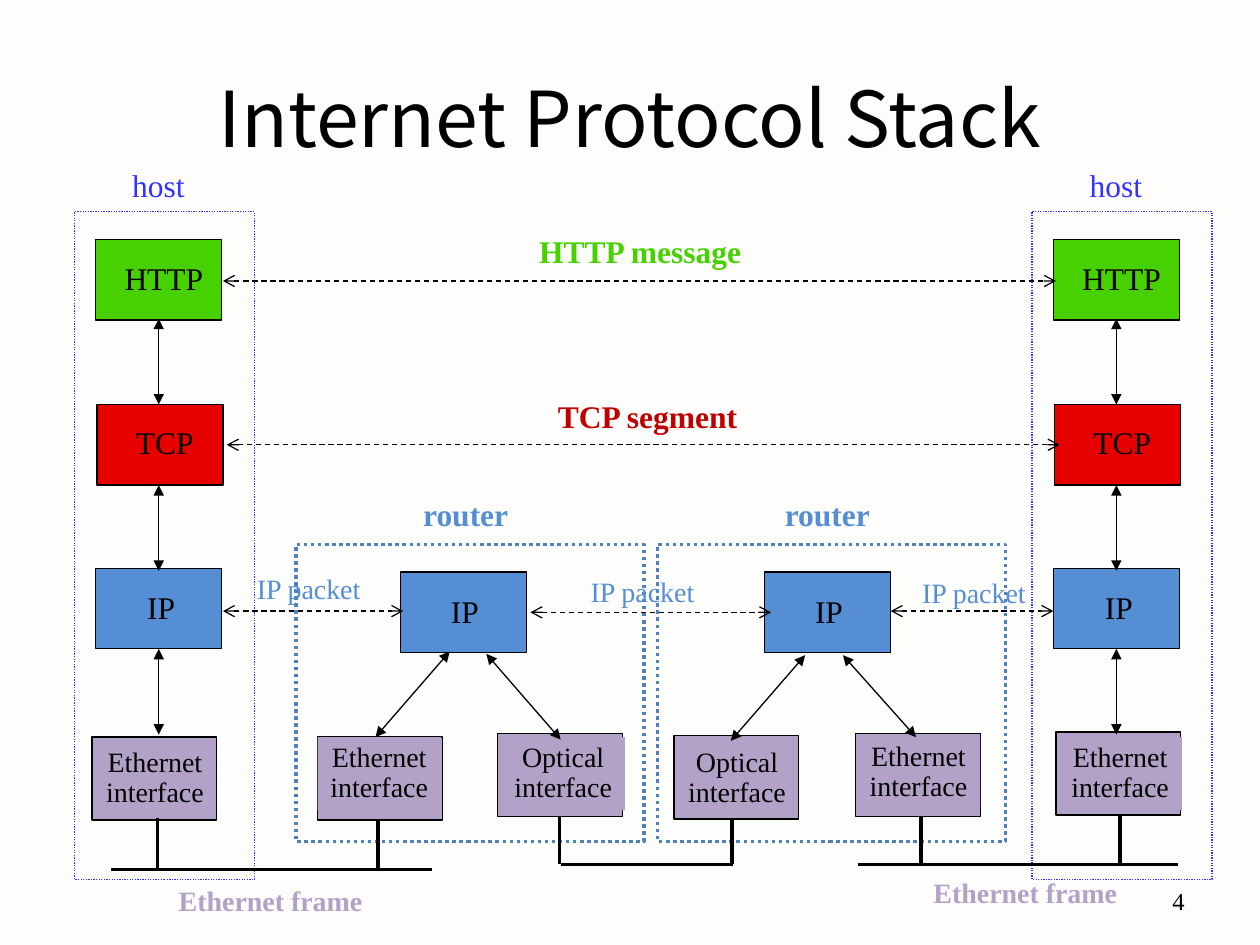
from lxml import etree
from pptx import Presentation
from pptx.dml.color import RGBColor
from pptx.enum.dml import MSO_LINE_DASH_STYLE as DASH
from pptx.enum.shapes import MSO_CONNECTOR as CONNECTOR, MSO_SHAPE as SHAPE
from pptx.enum.text import MSO_ANCHOR as ANCHOR, MSO_AUTO_SIZE as AUTO_SIZE, PP_ALIGN as ALIGN
from pptx.oxml.ns import qn
from pptx.util import Inches, Pt

# The slide is a grid of 100 columns by 75 rows; all lengths are in grid units.
COLUMNS, ROWS = 100, 75
UNIT = Inches(10) / COLUMNS

SERIF, SANS = "Times New Roman", "Noto Sans CJK JP"
BLACK, GREEN, RED, DARK_RED = "000000", "48D100", "E70000", "C00000"
BLUE, PURPLE, HOST_BLUE, ROUTER_BLUE = "558ED5", "B3A2C7", "3333FF", "4F81BD"

LAYER_SIZE = (10, 6.4)
INTERFACE_SIZE = (9.9, 6.6)
CAPTION_SIZE = (9.8, 5.8)
HOST_SIZE = (14.3, 53)
ROUTER_SIZE = (27.6, 23.6)


def grid(*lengths):
    return [round(length * UNIT) for length in lengths]


def color(value):
    return RGBColor.from_string(value)


def shift(origin, offset):
    return origin[0] + offset[0], origin[1] + offset[1]


def add_box(page, at, size, fill=None, line=None, width=0.75, dash=None):
    box = page.shapes.add_shape(SHAPE.RECTANGLE, *grid(*at, *size))
    box.shadow.inherit = False
    if fill:
        box.fill.solid()
        box.fill.fore_color.rgb = color(fill)
    else:
        box.fill.background()
    if line:
        box.line.color.rgb = color(line)
        box.line.width = Pt(width)
        if dash:
            box.line.dash_style = dash
    else:
        box.line.fill.background()
    return box


def add_text(page, at, size, lines, points=18, ink=BLACK, bold=False, align=ALIGN.LEFT,
             font=SERIF, anchor=ANCHOR.TOP, spacing=None, fill=None, wrap=False):
    box = page.shapes.add_textbox(*grid(*at, *size))
    if fill:
        box.fill.solid()
        box.fill.fore_color.rgb = color(fill)
    frame = box.text_frame
    frame.word_wrap = wrap
    frame.auto_size = AUTO_SIZE.NONE if wrap else AUTO_SIZE.SHAPE_TO_FIT_TEXT
    frame.vertical_anchor = anchor
    frame.text = lines
    for para in frame.paragraphs:
        para.alignment = align
        para.line_spacing = spacing
        para.font.name = font
        para.font.size = Pt(points)
        para.font.bold = bold
        para.font.color.rgb = color(ink)


def add_line(page, start, end, width=0.75, dash=None, arrow=None):
    line = page.shapes.add_connector(CONNECTOR.STRAIGHT, *grid(*start, *end))
    line.line.color.rgb = color(BLACK)
    line.line.width = Pt(width)
    if dash:
        line.line.dash_style = dash
    if arrow:
        outline = line.line._get_or_add_ln()
        for end_tag in ("a:headEnd", "a:tailEnd"):
            etree.SubElement(outline, qn(end_tag), type=arrow)
    etree.SubElement(line._element.spPr, qn("a:effectLst"))


def add_interface(page, at, name, caption_offset, patched):
    """Draw a link interface; a patched caption has its own fill."""
    add_box(page, at, INTERFACE_SIZE, PURPLE, BLACK)
    add_text(page, shift(at, caption_offset), CAPTION_SIZE, f"{name}\ninterface", 16,
             align=ALIGN.CENTER, spacing=0.9, fill=PURPLE if patched else None)


def add_host(page, at, interface_offset, caption_offset, patched):
    add_text(page, shift(at, (3.6, -4.1)), (6.5, 4), "host", ink=HOST_BLUE)
    layers = [
        ("HTTP", GREEN, (1.7, 2.2), (3, 3.3), 8.3),
        ("TCP", RED, (1.8, 15.3), (3.9, 16.3), 6.6),
        ("IP", BLUE, (1.7, 28.3), (4.8, 29.4), 4.2),
    ]
    for name, fill, offset, label_offset, label_width in layers:
        add_box(page, shift(at, offset), LAYER_SIZE, fill, BLACK)
        add_text(page, shift(at, label_offset), (label_width, 4), name)
    add_interface(page, shift(at, interface_offset), "Ethernet", caption_offset, patched)
    for top in (8.5, 21.7, 34.7):
        add_line(page, shift(at, (6.7, top)), shift(at, (6.7, top + 6.8)), arrow="triangle")
    add_box(page, at, HOST_SIZE, line=HOST_BLUE, dash=DASH.ROUND_DOT)


def add_router(page, at, ip_left, interfaces, links):
    add_text(page, shift(at, (9.1, -4.4)), (8.8, 4), "router", ink=BLUE, bold=True)
    add_box(page, shift(at, (ip_left, 2.2)), LAYER_SIZE, BLUE, BLACK)
    add_text(page, shift(at, (ip_left + 3, 3.3)), (4.2, 4), "IP")
    for name, offset, caption_offset, patched in interfaces:
        add_interface(page, shift(at, offset), name, caption_offset, patched)
    for start, end in links:
        add_line(page, shift(at, start), shift(at, end), arrow="triangle")
    add_box(page, at, ROUTER_SIZE, line=ROUTER_BLUE, width=2, dash=DASH.ROUND_DOT)


def add_cable(page, left, right, level, drops):
    """Draw a horizontal cable with a vertical drop from each interface."""
    add_line(page, (left, level), (right, level), width=2)
    for x, top in drops:
        add_line(page, (x, top), (x, level), width=2)


def add_exchange(page, left, right, level, label, label_at, label_size, **style):
    """Draw a dashed two-way arrow between peer layers, with its label."""
    add_line(page, (left, level), (right, level), dash=DASH.DASH, arrow="arrow")
    add_text(page, label_at, label_size, label, **style)


def build_slide(page):
    background = page.background.fill
    background.solid()
    background.fore_color.rgb = color("FDFDFC")

    add_text(page, (5, 3), (90, 12.5), "Internet Protocol Stack", 44, align=ALIGN.CENTER,
             font=SANS, anchor=ANCHOR.MIDDLE, wrap=True)
    add_text(page, (90.9, 69.5), (4.1, 4), "4", 14, align=ALIGN.RIGHT,
             anchor=ANCHOR.MIDDLE, wrap=True)

    add_host(page, (5.9, 16.8), (1.4, 41.7), (0.1, 0.4), False)
    add_host(page, (81.9, 16.8), (1.9, 41.3), (0.2, 0.4), True)
    add_router(page, (23.5, 43.2), 8.3,
               [("Ethernet", (1.7, 15.3), (0, 0), True),
                ("Optical", (16, 15), (0.3, 0.3), True)],
               [((12.2, 8.5), (6.3, 15.3)), ((15.1, 8.7), (21, 15.5))])
    add_router(page, (52.2, 43.2), 8.5,
               [("Optical", (1.3, 15.2), (0.1, 0.5), False),
                ("Ethernet", (15.7, 15), (0.1, 0.2), True)],
               [((11.7, 8.8), (5.8, 15.6)), ((14.7, 8.8), (20.5, 15.3))])

    add_cable(page, 8.8, 34.3, 69, [(12.5, 64.9), (30, 65.2)])
    add_cable(page, 44.5, 58.2, 68.6, [(44.4, 64.8), (58.1, 64.9)])
    add_cable(page, 68.1, 93.5, 68.6, [(73.1, 64.8), (88.9, 64.8)])

    add_exchange(page, 17.7, 83.8, 22.3, "HTTP message", (41.8, 17.9), (18.2, 4),
                 ink=GREEN, bold=True)
    add_exchange(page, 18, 84.1, 35.3, "TCP segment", (43.3, 31), (16.4, 4),
                 ink=DARK_RED, bold=True)
    packets = [
        (17.7, 32, 48.5, (19.4, 44.9)),
        (42.1, 61.2, 48.6, (45.9, 45.1)),
        (70.7, 83.6, 48.5, (72.2, 45.2)),
    ]
    for left, right, level, label_at in packets:
        add_exchange(page, left, right, level, "IP packet", label_at, (10.4, 3.7),
                     points=16, ink=BLUE)
    for at in ((13.2, 69.6), (73.1, 69)):
        add_text(page, at, (16.8, 3.7), "Ethernet frame", 16, PURPLE, bold=True)


def main():
    deck = Presentation()
    deck.slide_width, deck.slide_height = grid(COLUMNS, ROWS)
    build_slide(deck.slides.add_slide(deck.slide_layouts[6]))
    deck.save("out.pptx")


if __name__ == "__main__":
    main()
